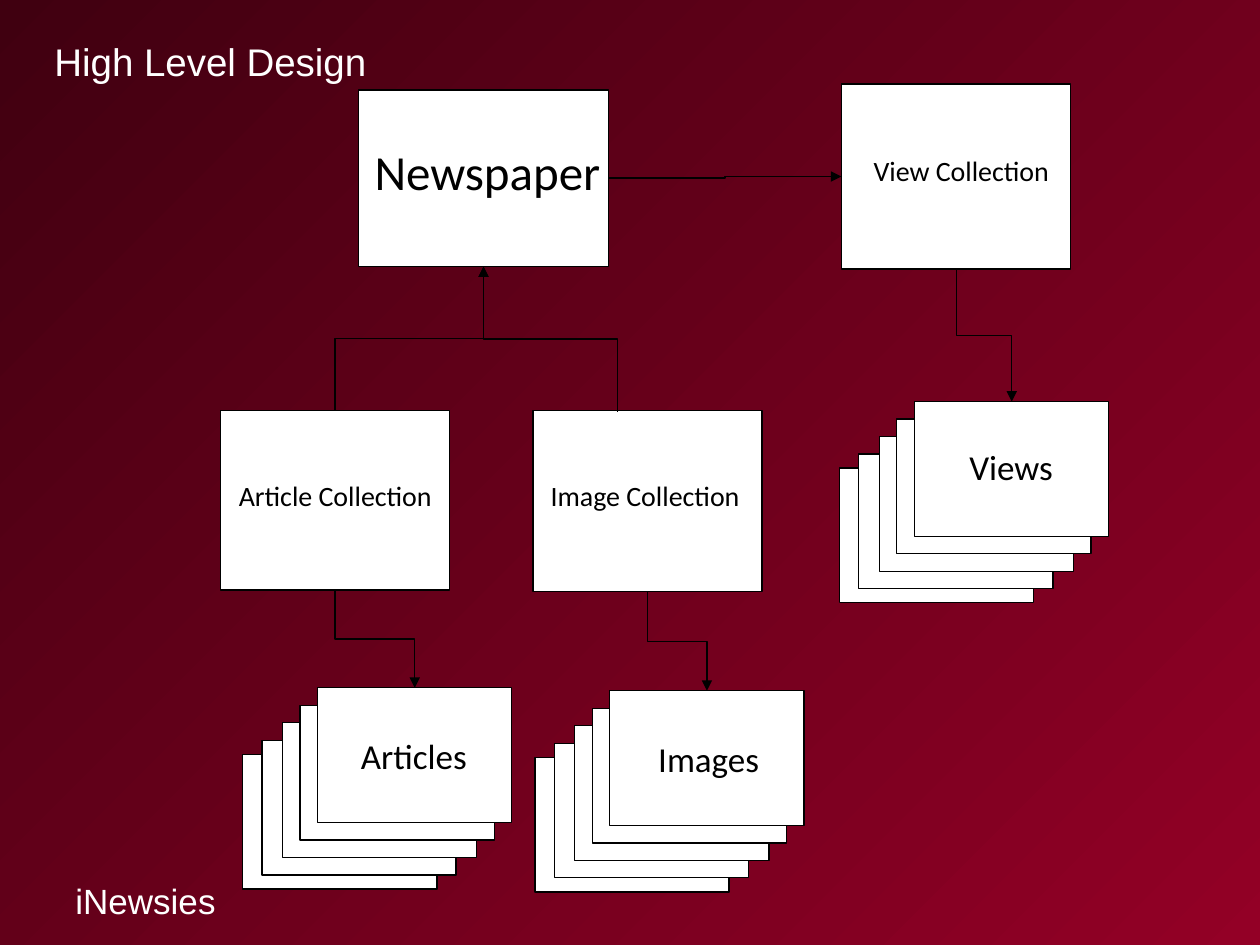
from lxml import etree
from pptx import Presentation
from pptx.dml.color import RGBColor
from pptx.enum.shapes import MSO_CONNECTOR, MSO_SHAPE
from pptx.enum.text import PP_ALIGN
from pptx.oxml.ns import qn
from pptx.util import Pt

WHITE = RGBColor(0xFF, 0xFF, 0xFF)
BLACK = RGBColor(0x00, 0x00, 0x00)
CRIMSON = RGBColor(0x93, 0x00, 0x26)
MAROON = RGBColor(0x40, 0x00, 0x10)

presentation = Presentation()
presentation.slide_width = Pt(720)
presentation.slide_height = Pt(540)
slide = presentation.slides.add_slide(presentation.slide_layouts[6])


def add_text(text, left, top, width, height, size, font="Calibri", color=BLACK,
             align=PP_ALIGN.CENTER, inset_x=3, inset_y=3):
    box = slide.shapes.add_textbox(Pt(left), Pt(top), Pt(width), Pt(height))
    frame = box.text_frame
    frame.word_wrap = True
    frame.margin_left = frame.margin_right = Pt(inset_x)
    frame.margin_top = frame.margin_bottom = Pt(inset_y)
    paragraph = frame.paragraphs[0]
    paragraph.alignment = align
    run = paragraph.add_run()
    run.text = text
    run.font.size = Pt(size)
    run.font.name = font
    run.font.color.rgb = color


def add_box(left, top, width, height):
    shape = slide.shapes.add_shape(
        MSO_SHAPE.RECTANGLE, Pt(left), Pt(top), Pt(width), Pt(height))
    shape.shadow.inherit = False
    shape.fill.solid()
    shape.fill.fore_color.rgb = WHITE
    shape.line.color.rgb = BLACK
    shape.line.width = Pt(0.75)


# Background: radial gradient centred on the bottom right corner
fill = slide.background.fill
fill.gradient()
for stop, color, position in zip(fill.gradient_stops, (CRIMSON, MAROON), (0, 1)):
    stop.color.rgb = color
    stop.position = position
gradient = slide.background._cSld.find(".//" + qn("a:gradFill"))
gradient.remove(gradient.find(qn("a:lin")))
path = etree.SubElement(gradient, qn("a:path"), path="circle")
etree.SubElement(path, qn("a:fillToRect"), l="100000", t="100000")

# Title and footer
heading_format = dict(font="Arial", color=WHITE, align=PP_ALIGN.LEFT,
                      inset_x=7.2, inset_y=3.6)
add_text("iNewsies", 36, 499, 138, 32, size=20, **heading_format)
add_text("High Level Design", 24, 18, 672, 66, size=22, **heading_format)

# Single boxes: label, box, label area, text size
single_boxes = [
    ("Newspaper", (204.7, 51.5, 143, 100.7), (210, 77.8, 137, 41), 28),
    ("Article Collection", (126, 234.5, 131, 102.7), (129, 270.7, 125.3, 41), 16),
    ("View Collection", (480.8, 48, 131, 105.8), (486.7, 85, 125.3, 41), 16),
    ("Image Collection", (304.5, 234.5, 131, 103.7), (306, 270.7, 125.3, 41), 16),
]
for label, box, label_area, size in single_boxes:
    add_box(*box)
    add_text(label, *label_area, size=size)

# Stacks of cards: label, front card corner, label corner
stacks = [
    ("Articles", (181.5, 393), (186.5, 416.5)),
    ("Images", (348.5, 394.7), (355, 418.3)),
    ("Views", (522.5, 229.5), (527.8, 251.3)),
]
CARD_OFFSETS = [(-42.8, 38), (-31.8, 30), (-20, 20), (-10, 10), (0, 0)]
for label, (left, top), label_corner in stacks:
    for shift_x, shift_y in CARD_OFFSETS:
        add_box(left + shift_x, top + shift_y, 111, 77)
    add_text(label, *label_corner, 100, 32, size=20)

# Elbow arrows: start, end, whether they leave vertically
arrows = [
    ((191.5, 234.5), (276.3, 152.3), True),
    ((352.8, 235.2), (276.3, 152.3), True),
    ((546.5, 153.8), (578.2, 229.5), True),
    ((191.5, 337.2), (237, 393), True),
    ((370, 338.2), (404, 394.7), True),
    ((347.7, 101.8), (480.8, 100.9), False),
]
for (x1, y1), (x2, y2), vertical in arrows:
    begin_x, begin_y, end_x, end_y = x1, y1, x2, y2
    turn = 1 if y2 > y1 else -1
    if vertical:
        # Unrotated frame that lands on the end points after a quarter turn
        center_x, center_y = (x1 + x2) / 2, (y1 + y2) / 2
        half_length, half_shift = abs(y2 - y1) / 2, turn * (x2 - x1) / 2
        begin_x, end_x = center_x - half_length, center_x + half_length
        begin_y, end_y = center_y + half_shift, center_y - half_shift
    connector = slide.shapes.add_connector(
        MSO_CONNECTOR.ELBOW, Pt(begin_x), Pt(begin_y), Pt(end_x), Pt(end_y))
    connector.line.color.rgb = BLACK
    connector.line.width = Pt(0.75)
    properties = connector._element.spPr
    if vertical:
        properties.find(qn("a:xfrm")).set("rot", str(turn * 90 % 360 * 60000))
    etree.SubElement(properties.find(qn("a:ln")), qn("a:tailEnd"), type="triangle")
    etree.SubElement(properties, qn("a:effectLst"))

presentation.save("out.pptx")
